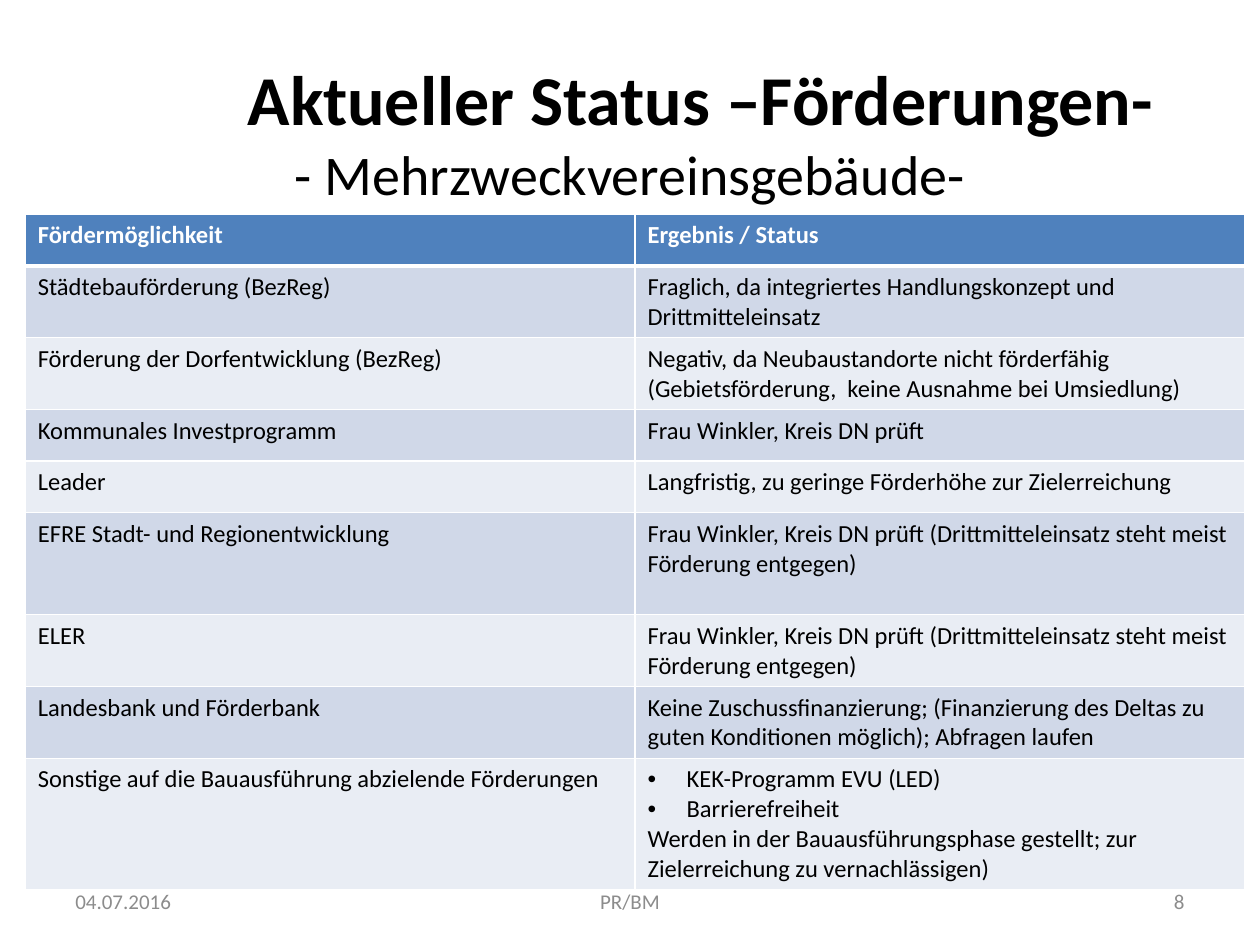
from lxml.etree import SubElement
from pptx import Presentation
from pptx.dml.color import RGBColor
from pptx.enum.text import MSO_ANCHOR as Anchor, PP_ALIGN as Align
from pptx.oxml.ns import qn
from pptx.util import Inches, Pt

FONT = "Calibri"
BLACK, WHITE, GRAY = "000000", "FFFFFF", "8C8C8C"
HEADER_FILL, BAND_FILLS = "4F81BD", ("D0D8E8", "E9EDF4")

HEADINGS = ("Fördermöglichkeit", "Ergebnis / Status")
REVIEW = "Frau Winkler, Kreis DN prüft"
REVIEW_LIMITED = REVIEW + " (Drittmitteleinsatz steht meist Förderung entgegen)"
FUNDING = [
    ("Städtebauförderung (BezReg)",
     "Fraglich, da integriertes Handlungskonzept und Drittmitteleinsatz", 0.57),
    ("Förderung der Dorfentwicklung (BezReg)",
     "Negativ, da Neubaustandorte nicht förderfähig "
     "(Gebietsförderung,  keine Ausnahme bei Umsiedlung)", 0.57),
    ("Kommunales Investprogramm", REVIEW, 0.41),
    ("Leader", "Langfristig, zu geringe Förderhöhe zur Zielerreichung", 0.41),
    ("EFRE Stadt- und Regionentwicklung", REVIEW_LIMITED, 0.81),
    ("ELER", REVIEW_LIMITED, 0.57),
    ("Landesbank und Förderbank",
     "Keine Zuschussfinanzierung; (Finanzierung des Deltas zu guten "
     "Konditionen möglich); Abfragen laufen", 0.57),
    ("Sonstige auf die Bauausführung abzielende Förderungen",
     "• KEK-Programm EVU (LED)\n• Barrierefreiheit\n"
     "Werden in der Bauausführungsphase gestellt; zur Zielerreichung "
     "zu vernachlässigen)", 1.04),
]


def color(hex_value):
    return RGBColor.from_string(hex_value)


def style(paragraph, size, hex_value, bold=False):
    font = paragraph.font
    font.name, font.size, font.bold = FONT, Pt(size), bold
    font.color.rgb = color(hex_value)


def add_frame(slide, left, top, width, height, anchor):
    frame = slide.shapes.add_textbox(
        Inches(left), Inches(top), Inches(width), Inches(height)).text_frame
    frame.word_wrap = True
    frame.vertical_anchor = anchor
    return frame


def add_title(slide, left, top, width, height):
    frame = add_frame(slide, left, top, width, height, Anchor.TOP)
    frame.margin_top = Inches(0.08)
    headline, subtitle = frame.paragraphs[0], frame.add_paragraph()
    headline.text = "Aktueller Status –Förderungen-"
    headline._p.get_or_add_pPr().set("marL", str(Inches(1.12)))
    style(headline, 40, BLACK, bold=True)
    subtitle.text = "- Mehrzweckvereinsgebäude-"
    style(subtitle, 32, BLACK)
    headline.alignment = subtitle.alignment = Align.CENTER


def add_footer(slide, left, top, width, height):
    side = 2.33
    middle = 3.17
    parts = [
        ("04.07.2016", left, side, Align.LEFT),
        ("PR/BM", left + (width - middle) / 2, middle, Align.CENTER),
        ("8", left + width - side, side, Align.RIGHT),
    ]
    for text, part_left, part_width, alignment in parts:
        frame = add_frame(slide, part_left, top, part_width, height, Anchor.MIDDLE)
        paragraph = frame.paragraphs[0]
        paragraph.text = text
        paragraph.alignment = alignment
        style(paragraph, 12, GRAY)


def set_borders(cell, top, bottom):
    properties = cell._tc.get_or_add_tcPr()
    for tag, width in (("lnL", 1), ("lnR", 1), ("lnT", top), ("lnB", bottom)):
        line = SubElement(properties, qn("a:" + tag), w=str(Pt(width)))
        fill = SubElement(line, qn("a:solidFill"))
        SubElement(fill, qn("a:srgbClr"), val=WHITE)


def add_bullet(paragraph):
    properties = paragraph._p.get_or_add_pPr()
    properties.set("marL", str(Inches(0.31)))
    properties.set("indent", str(Inches(-0.31)))
    SubElement(properties, qn("a:buFont"), typeface="Arial")
    SubElement(properties, qn("a:buChar"), char="•")


def fill_cell(cell, text, fill, text_color, bold, top, bottom):
    set_borders(cell, top, bottom)
    cell.fill.solid()
    cell.fill.fore_color.rgb = color(fill)
    frame = cell.text_frame
    for index, line in enumerate(text.split("\n")):
        paragraph = frame.add_paragraph() if index else frame.paragraphs[0]
        if line.startswith("• "):
            add_bullet(paragraph)
        paragraph.text = line.removeprefix("• ")
        style(paragraph, 14, text_color, bold)


def add_funding_table(slide, left, top, width, height):
    rows = [(*HEADINGS, 0.41), *FUNDING]
    table = slide.shapes.add_table(
        len(rows), 2, Inches(left), Inches(top), Inches(width), Inches(height)).table
    for column in table.columns:
        column.width = Inches(width / 2)
    for index, (*texts, row_height) in enumerate(rows):
        table.rows[index].height = Inches(row_height)
        header = index == 0
        fill = HEADER_FILL if header else BAND_FILLS[(index - 1) % 2]
        for column, text in enumerate(texts):
            fill_cell(table.cell(index, column), text, fill,
                      WHITE if header else BLACK, header,
                      3 if index == 1 else 1, 3 if header else 1)


def main():
    presentation = Presentation()
    presentation.slide_width, presentation.slide_height = Inches(10), Inches(7.5)
    slide = presentation.slides.add_slide(presentation.slide_layouts[6])
    add_title(slide, 0.5, 0.36, 9, 1.25)
    add_footer(slide, 0.5, 6.95, 9, 0.4)
    add_funding_table(slide, 0.2, 1.7, 9.68, 5.36)
    presentation.save("out.pptx")


if __name__ == "__main__":
    main()
